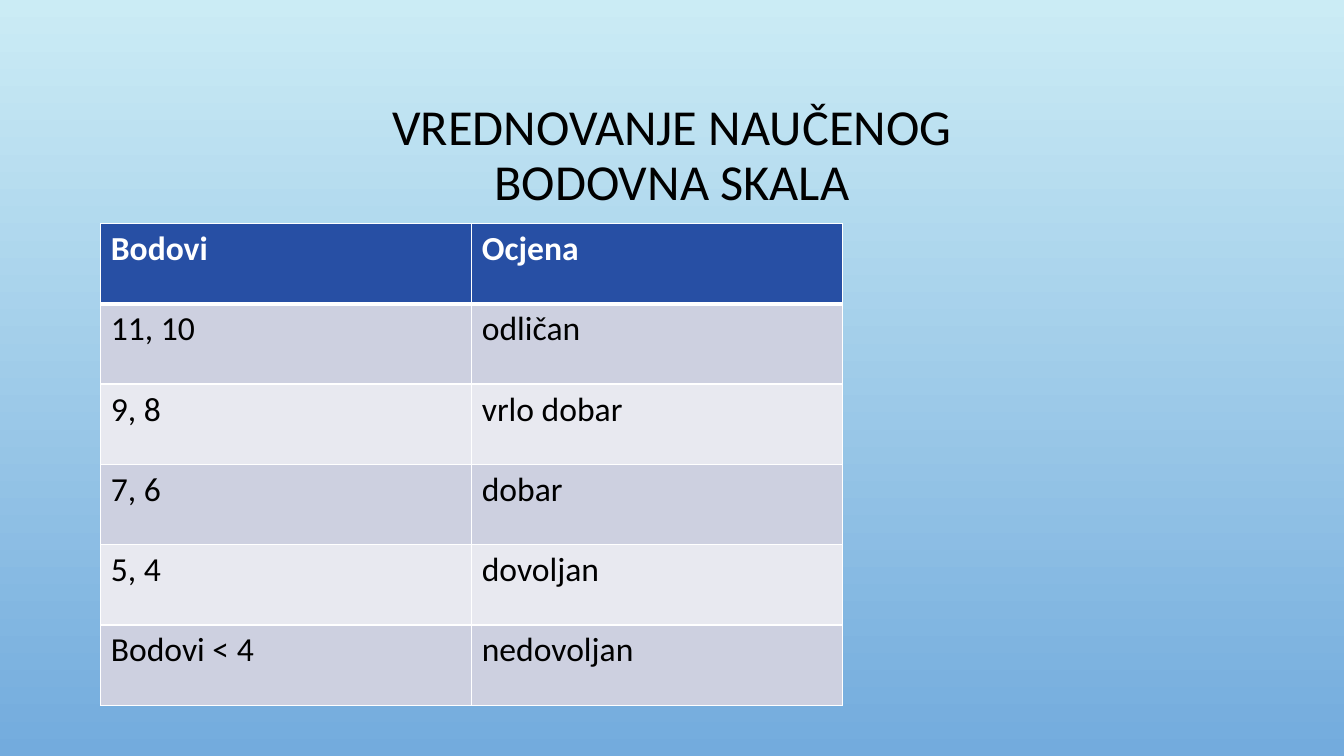
"""Build the slide with the grading scale table."""
from lxml import etree
from pptx import Presentation
from pptx.dml.color import RGBColor
from pptx.enum import text
from pptx.oxml import ns
from pptx.util import Pt


def rgb(color):
    return RGBColor.from_string(color)


def style(p, size, color, bold):
    for r in p.runs:
        values = {"name": "Calibri", "size": Pt(size), "bold": bold}
        for key, value in values.items():
            setattr(r.font, key, value)
        r.font.color.rgb = rgb(color)


prs = Presentation()
prs.slide_width, prs.slide_height = Pt(960), Pt(540)
s = prs.slides.add_slide(prs.slide_layouts[5])

bg = s.background.fill
bg.gradient()
bg.gradient_angle = 270
for stop, color in zip(bg.gradient_stops, ("CBECF5", "73ABDD")):
    stop.color.rgb = rgb(color)

title = s.shapes.title
box = {"left": 72, "top": 49, "width": 816, "height": 126}
for key, value in box.items():
    setattr(title, key, Pt(value))
tf = title.text_frame
tf.word_wrap = True
tf.auto_size = text.MSO_AUTO_SIZE.NONE
tf.vertical_anchor = text.MSO_ANCHOR.MIDDLE
p = tf.paragraphs[0]
p.text = "VREDNOVANJE NAUČENOG\vBODOVNA SKALA"
p.alignment = text.PP_ALIGN.CENTER
p.line_spacing = 0.9
style(p, 36, "000000", False)

grades = [
    ("Bodovi", "Ocjena"),
    ("11, 10", "odličan"),
    ("9, 8", "vrlo dobar"),
    ("7, 6", "dobar"),
    ("5, 4", "dovoljan"),
    ("Bodovi < 4", "nedovoljan"),
]
frame = s.shapes.add_table(len(grades), 2, Pt(72), Pt(159.6), Pt(530), Pt(344.4))
table = frame.table
for row in table.rows:
    row.height = Pt(57.4)

for i, row in enumerate(grades):
    fill = "274FA4" if i == 0 else ("E8E9F0", "CDD0E0")[i % 2]
    widths = {"L": 1, "R": 1, "T": 3 if i == 1 else 1, "B": 3 if i == 0 else 1}
    for j, label in enumerate(row):
        cell = table.cell(i, j)
        tcPr = cell._tc.get_or_add_tcPr()
        for side, width in widths.items():
            ln = etree.SubElement(tcPr, ns.qn(f"a:ln{side}"), w=str(Pt(width)))
            solid = etree.SubElement(ln, ns.qn("a:solidFill"))
            etree.SubElement(solid, ns.qn("a:srgbClr"), val="FFFFFF")
        cell.fill.solid()
        cell.fill.fore_color.rgb = rgb(fill)
        p = cell.text_frame.paragraphs[0]
        p.text = label
        style(p, 24, "FFFFFF" if i == 0 else "000000", i == 0)

prs.save("out.pptx")
